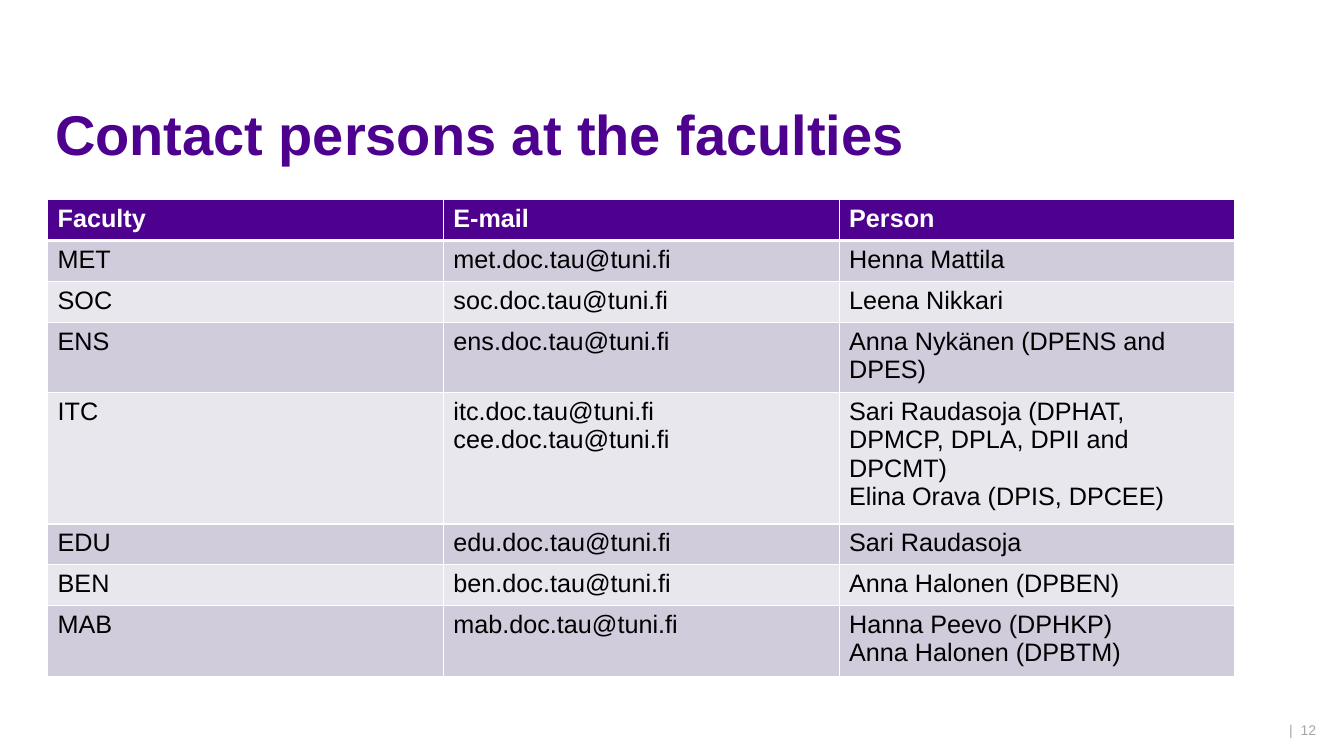
from dataclasses import dataclass

from lxml.etree import SubElement as Sub
from pptx import Presentation
from pptx.dml.color import RGBColor as Rgb
from pptx.enum.text import MSO_ANCHOR as Anchor
from pptx.oxml.ns import qn
from pptx.util import Cm, Pt


@dataclass(frozen=True)
class Theme:
    font: str = "Arial"
    brand: str = "4E008E"
    white: str = "FFFFFF"
    ink: str = "000000"
    muted: str = "A6A6A6"
    bands: tuple = ("D0CCDB", "E9E7EE")
    title: int = 40
    body: int = 18
    small: int = 10
    thin: int = 1
    thick: int = 3


THEME = Theme()
ROWS = [
    ("Faculty", "E-mail", "Person"),
    ("MET", "met.doc.tau@tuni.fi", "Henna Mattila"),
    ("SOC", "soc.doc.tau@tuni.fi", "Leena Nikkari"),
    ("ENS", "ens.doc.tau@tuni.fi", "Anna Nykänen (DPENS and DPES)"),
    ("ITC", "itc.doc.tau@tuni.fi\ncee.doc.tau@tuni.fi",
     "Sari Raudasoja (DPHAT, DPMCP, DPLA, DPII and DPCMT)\n"
     "Elina Orava (DPIS, DPCEE)"),
    ("EDU", "edu.doc.tau@tuni.fi", "Sari Raudasoja"),
    ("BEN", "ben.doc.tau@tuni.fi", "Anna Halonen (DPBEN)"),
    ("MAB", "mab.doc.tau@tuni.fi",
     "Hanna Peevo (DPHKP)\vAnna Halonen (DPBTM)"),
]


def write(frame, text, size=THEME.body, color=THEME.ink, bold=False,
          space=None):
    for i, line in enumerate(text.split("\n")):
        para = frame.add_paragraph() if i else frame.paragraphs[0]
        para.text = line
        if space:
            para.line_spacing = space
        for run in para.runs:
            font = run.font
            font.name = THEME.font
            font.size = Pt(size)
            font.bold = bold
            font.color.rgb = Rgb.from_string(color)


def label(slide, box, text, left=0.25, **style):
    frame = slide.shapes.add_textbox(*map(Cm, box)).text_frame
    frame.word_wrap = True
    frame.vertical_anchor = Anchor.BOTTOM
    frame.margin_left = Cm(left)
    write(frame, text, **style)


def edge(cell, side, width):
    props = cell._tc.get_or_add_tcPr()
    line = Sub(props, qn(f"a:ln{side}"), w=str(Pt(width)))
    fill = Sub(line, qn("a:solidFill"))
    Sub(fill, qn("a:srgbClr"), val=THEME.white)


def paint(cell, row):
    top = THEME.thick if row == 1 else THEME.thin
    base = THEME.thick if row == 0 else THEME.thin
    for side, width in zip("LRTB", (THEME.thin, THEME.thin, top, base)):
        edge(cell, side, width)
    cell.fill.solid()
    shade = THEME.bands[(row - 1) % 2] if row else THEME.brand
    cell.fill.fore_color.rgb = Rgb.from_string(shade)


def contacts(slide, box):
    count = len(ROWS[0])
    table = slide.shapes.add_table(len(ROWS), count, *map(Cm, box)).table
    table.horz_banding = False
    for col in table.columns:
        col.width = Cm(box[2] / count)
    for r, row in enumerate(ROWS):
        table.rows[r].height = Cm(box[3] / len(ROWS))
        for c, text in enumerate(row):
            cell = table.cell(r, c)
            paint(cell, r)
            write(cell.text_frame, text, bold=r == 0,
                  color=THEME.ink if r else THEME.white)


def main():
    deck = Presentation()
    deck.slide_width, deck.slide_height = Cm(33.87), Cm(19.05)
    slide = deck.slides.add_slide(deck.slide_layouts[6])
    label(slide, (1.14, 2.54, 29.21, 1.8), "Contact persons at the faculties",
          size=THEME.title, color=THEME.brand, bold=True, space=0.9)
    contacts(slide, (1.2, 5.03, 29.92, 8.24))
    label(slide, (32.49, 18.03, 1.04, 0.71), "|  12", left=0,
          size=THEME.small, color=THEME.muted)
    deck.save("out.pptx")


if __name__ == "__main__":
    main()
